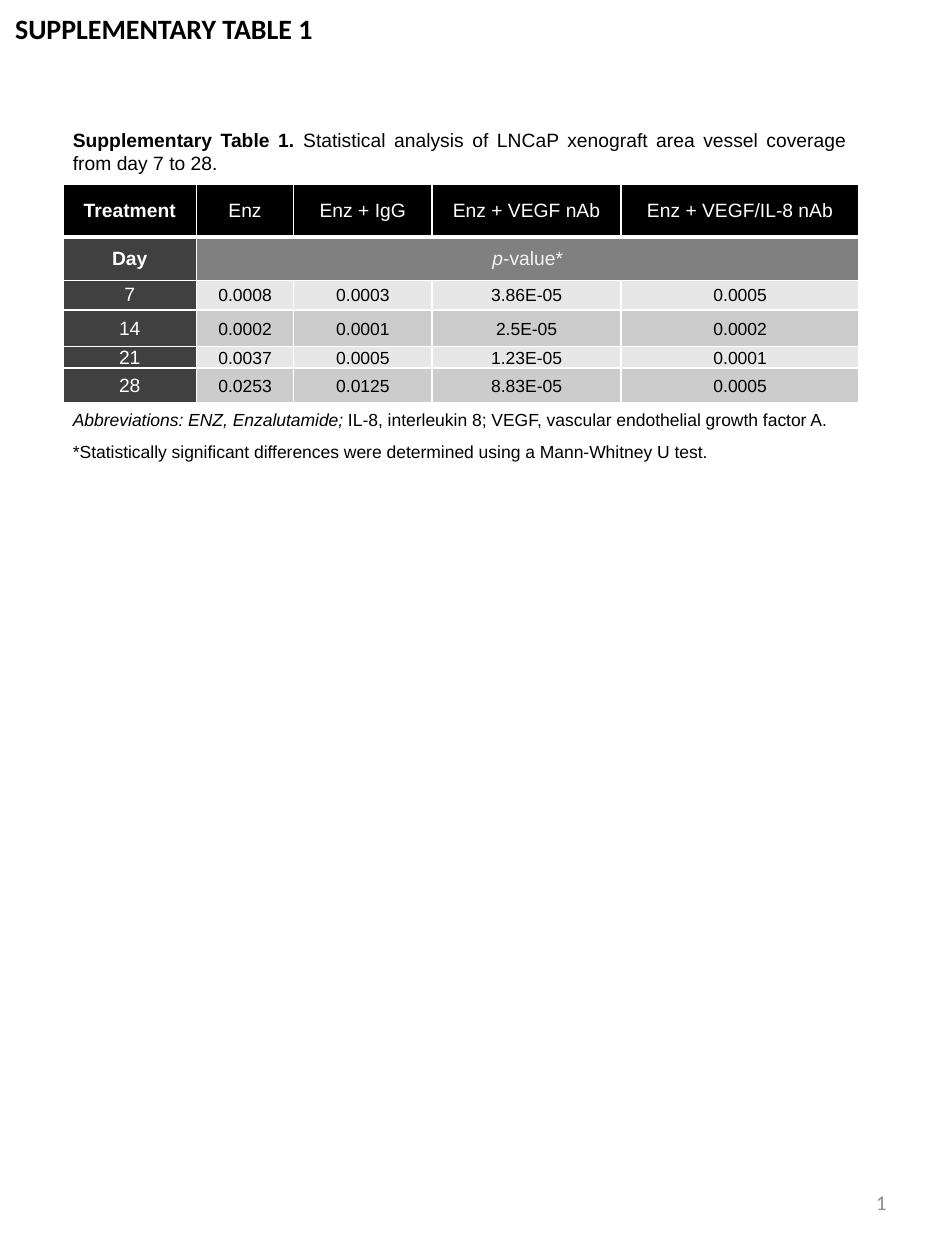
from lxml.etree import SubElement
from pptx import Presentation
from pptx.dml.color import RGBColor
from pptx.enum.text import MSO_ANCHOR as Anchor, MSO_AUTO_SIZE as AutoSize, PP_ALIGN as Align
from pptx.oxml.ns import qn
from pptx.util import Cm, Pt

BLACK = RGBColor(0x00, 0x00, 0x00)
WHITE = RGBColor(0xFF, 0xFF, 0xFF)
DAY_GREY = RGBColor(0x40, 0x40, 0x40)
SPAN_GREY = RGBColor(0x80, 0x80, 0x80)
SPAN_TEXT = RGBColor(0xF2, 0xF2, 0xF2)
BANDS = [RGBColor(0xE7, 0xE7, 0xE7), RGBColor(0xCC, 0xCC, 0xCC)]
NUMBER_GREY = RGBColor(0x8C, 0x8C, 0x8C)


def write(paragraph, text, size=11, font="Arial", color=BLACK, bold=False,
          italic=False, align=Align.CENTER):
    paragraph.alignment = align
    run = paragraph.add_run()
    run.text = text
    run.font.size = Pt(size)
    run.font.name = font
    run.font.color.rgb = color
    run.font.bold = bold
    run.font.italic = italic
    return run


def style_cell(cell, fill, top=1, bottom=1, side_margin=0.18, top_margin=0):
    cell.fill.solid()
    cell.fill.fore_color.rgb = fill
    cell.vertical_anchor = Anchor.MIDDLE
    cell.margin_left = cell.margin_right = Cm(side_margin)
    cell.margin_top, cell.margin_bottom = Cm(top_margin), 0
    properties = cell._tc.get_or_add_tcPr()
    edges = [("a:lnL", 1), ("a:lnR", 1), ("a:lnT", top), ("a:lnB", bottom)]
    for position, (edge, width) in enumerate(edges):
        line = SubElement(properties, qn(edge), w=str(Pt(width)))
        SubElement(SubElement(line, qn("a:solidFill")), qn("a:srgbClr"), val=str(WHITE))
        properties.insert(position, line)


deck = Presentation()
deck.slide_width, deck.slide_height = Cm(19.05), Cm(25.4)
slide = deck.slides.add_slide(deck.slide_layouts[5])

# Heading
heading = slide.shapes.title
heading.left, heading.top, heading.width, heading.height = Cm(0.05), Cm(0.1), Cm(6.58), Cm(0.94)
heading.text_frame.word_wrap = False
heading.text_frame.auto_size = AutoSize.NONE
heading.text_frame.vertical_anchor = Anchor.TOP
write(heading.text_frame.paragraphs[0], "SUPPLEMENTARY TABLE 1", size=16,
      font="Calibri", bold=True, align=Align.LEFT)

# Table grid
headers = ["Treatment", "Enz", "Enz + IgG", "Enz + VEGF nAb", "Enz + VEGF/IL-8 nAb"]
p_values = [
    ("7", "0.0008", "0.0003", "3.86E-05", "0.0005"),
    ("14", "0.0002", "0.0001", "2.5E-05", "0.0002"),
    ("21", "0.0037", "0.0005", "1.23E-05", "0.0001"),
    ("28", "0.0253", "0.0125", "8.83E-05", "0.0005"),
]
column_widths = [2.69, 1.96, 2.79, 3.81, 4.8]
row_heights = [1.07, 0.87, 0.6, 0.74, 0.41, 0.69]
results = slide.shapes.add_table(
    len(row_heights), len(column_widths), Cm(1.27), Cm(3.71),
    Cm(sum(column_widths)), Cm(sum(row_heights))).table
for column, width in zip(results.columns, column_widths):
    column.width = Cm(width)
for row, height in zip(results.rows, row_heights):
    row.height = Cm(height)

# Treatment header row
for column, treatment in enumerate(headers):
    cell = results.cell(0, column)
    style_cell(cell, BLACK, bottom=3)
    write(cell.text_frame.paragraphs[0], treatment, color=WHITE, bold=column == 0)

# Day and p-value row
day = results.cell(1, 0)
style_cell(day, DAY_GREY, top=3)
write(day.text_frame.paragraphs[0], "Day", color=WHITE, bold=True)
results.cell(1, 1).merge(results.cell(1, 4))
for column in range(1, 5):
    style_cell(results.cell(1, column), SPAN_GREY, top=3)
p_label = results.cell(1, 1).text_frame.paragraphs[0]
write(p_label, "p", color=SPAN_TEXT, italic=True)
write(p_label, "-value*", color=SPAN_TEXT)

# Values for each day
for index, values in enumerate(p_values):
    for column, value in enumerate(values):
        cell = results.cell(index + 2, column)
        paragraph = cell.text_frame.paragraphs[0]
        if column == 0:
            style_cell(cell, DAY_GREY)
            write(paragraph, value, color=WHITE)
        else:
            style_cell(cell, BANDS[index % 2], side_margin=0.03, top_margin=0.03)
            write(paragraph, value, size=10)

# Caption above the table and notes below it: top, width, height, size, parts
passages = [
    (2.46, 16.1, 1.19, 11, [
        ("Supplementary Table 1. ", {"bold": True}),
        ("Statistical analysis of LNCaP xenograft area vessel coverage from day 7 to 28.", {})]),
    (8.13, 16.38, 0.69, 10, [
        ("Abbreviations: ENZ, Enzalutamide; ", {"italic": True}),
        ("IL-8, interleukin 8; VEGF, vascular endothelial growth factor A.", {})]),
    (8.76, 16.38, 0.69, 10, [
        ("*Statistically significant differences were determined using a Mann-Whitney U test.", {})]),
]
for top, width, height, size, parts in passages:
    passage = slide.shapes.add_textbox(Cm(1.22), Cm(top), Cm(width), Cm(height)).text_frame
    passage.word_wrap = True
    for text, emphasis in parts:
        write(passage.paragraphs[0], text, size=size, align=Align.JUSTIFY, **emphasis)

# Page number as a live field
page_number = slide.shapes.add_textbox(Cm(13.67), Cm(23.55), Cm(4.45), Cm(1.35)).text_frame
page_number.word_wrap = True
page_number.vertical_anchor = Anchor.MIDDLE
field = write(page_number.paragraphs[0], "1", size=12, font="Calibri",
              color=NUMBER_GREY, align=Align.RIGHT)._r
field.tag = qn("a:fld")
field.set("id", "{B6F15528-21DE-4FAA-801E-634DDDAF4B2B}")
field.set("type", "slidenum")

deck.save("out.pptx")
